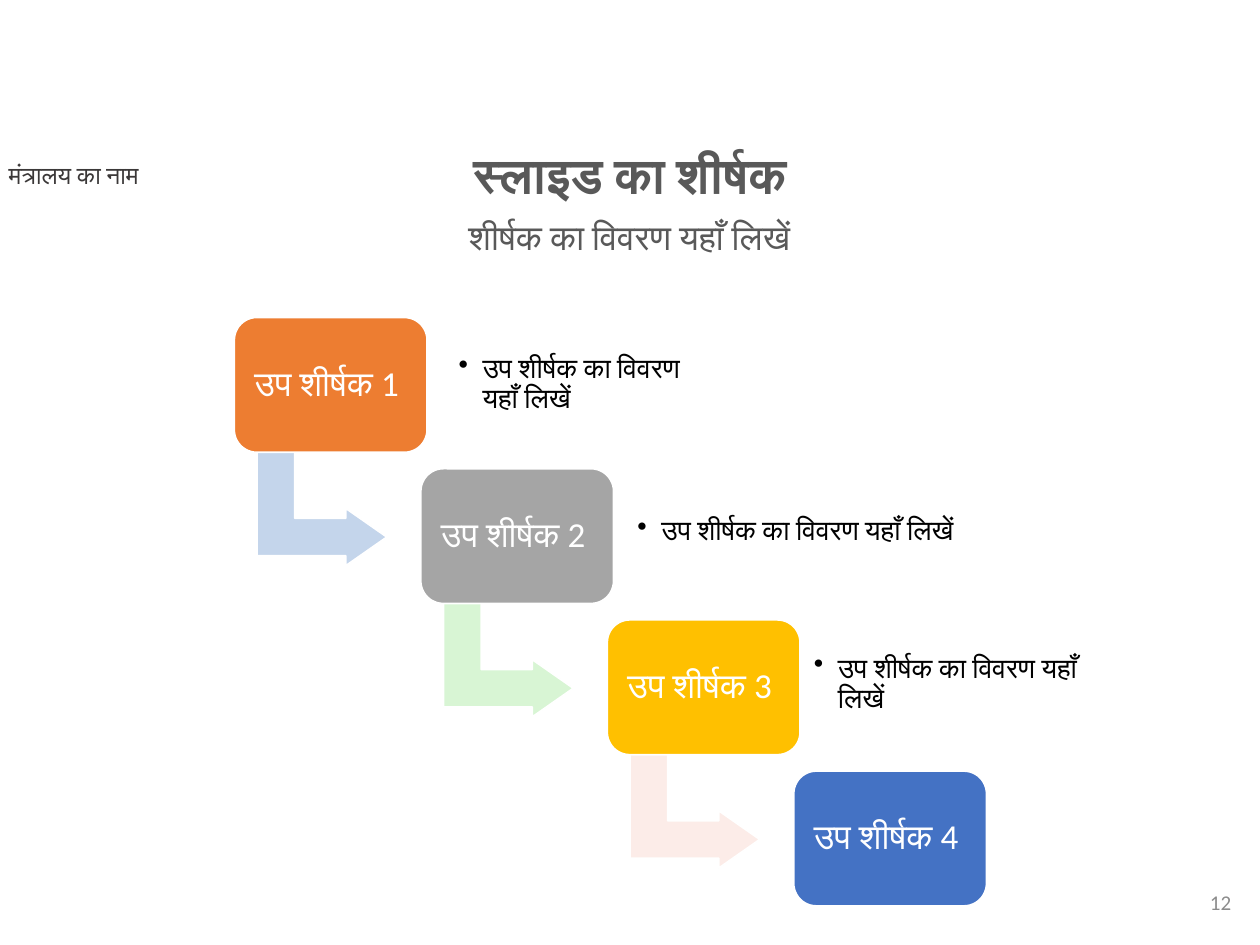
import pptx
import pptx.dml.color
import pptx.enum.shapes
import pptx.enum.text
import pptx.oxml.ns
import pptx.util
from lxml import etree

RGBColor = pptx.dml.color.RGBColor
Shape = pptx.enum.shapes.MSO_SHAPE
Align = pptx.enum.text.PP_ALIGN
Anchor = pptx.enum.text.MSO_ANCHOR

PX = 9144
FONT = "Calibri"
WHITE = RGBColor(0xFF, 0xFF, 0xFF)
BLACK = RGBColor(0x00, 0x00, 0x00)
CHARCOAL = RGBColor(0x3B, 0x38, 0x38)
DARK_GRAY = RGBColor(0x59, 0x59, 0x59)
LIGHT_GRAY = RGBColor(0x8C, 0x8C, 0x8C)
ORANGE = RGBColor(0xED, 0x7D, 0x31)
GRAY = RGBColor(0xA5, 0xA5, 0xA5)
GOLD = RGBColor(0xFF, 0xC0, 0x00)
BLUE = RGBColor(0x44, 0x72, 0xC4)
PALE_BLUE = RGBColor(0xC4, 0xD5, 0xEB)
PALE_GREEN = RGBColor(0xD8, 0xF5, 0xD4)
PALE_PINK = RGBColor(0xFC, 0xEC, 0xE8)

STEP_SIZE = (153, 107)
STEP_PITCH = (148, 120)
ARROW_OFFSET = (24, 100)
ARROW_SIZE = (91, 103)
ARROW_ADJUSTMENTS = (0.328, 0.25, 0.358)
DESCRIPTION = "उप शीर्षक का विवरण यहाँ लिखें"
DESCRIPTION_HEIGHT = 86
BULLET_INDENT = 19

STEPS = [
    {"fill": ORANGE, "arrow": PALE_BLUE, "description": (170, 10, 201)},
    {"fill": GRAY, "arrow": PALE_GREEN, "description": (164, 7, 296)},
    {"fill": GOLD, "arrow": PALE_PINK, "description": (156, 8, 247)},
    {"fill": BLUE},
]


def px(*lengths):
    return [pptx.util.Emu(length * PX) for length in lengths]


def apply_format(target, values):
    for name, value in values.items():
        setattr(target, name, value)


def add_bullet(para):
    properties = para._p.get_or_add_pPr()
    properties.set("marL", str(BULLET_INDENT * PX))
    properties.set("indent", str(-BULLET_INDENT * PX))
    bullet = etree.SubElement(properties, pptx.oxml.ns.qn("a:buChar"))
    bullet.set("char", "•")


def write_text(box, text, size, color, bold=False, align=Align.LEFT,
               anchor=Anchor.TOP, spacing=1.0, inset=None, bullet=False):
    frame = box.text_frame
    apply_format(frame, {"word_wrap": True, "vertical_anchor": anchor})
    if inset is not None:
        for side in ("left", "top", "right", "bottom"):
            setattr(frame, f"margin_{side}", px(inset)[0])
    para = frame.paragraphs[0]
    if bullet:
        add_bullet(para)
    apply_format(para, {"alignment": align, "line_spacing": spacing})
    span = para.add_run()
    span.text = text
    apply_format(span.font, {"name": FONT, "size": pptx.util.Pt(size), "bold": bold})
    span.font.color.rgb = color
    script_font = etree.SubElement(span._r.get_or_add_rPr(), pptx.oxml.ns.qn("a:cs"))
    script_font.set("typeface", FONT)


def add_text(page, bounds, text, size, color, **options):
    box = page.shapes.add_textbox(*px(*bounds))
    write_text(box, text, size, color, **options)


def add_solid(page, kind, bounds, fill, adjustments):
    shape = page.shapes.add_shape(kind, *px(*bounds))
    shape.shadow.inherit = False
    shape.fill.solid()
    shape.fill.fore_color.rgb = fill
    shape.line.color.rgb = WHITE
    shape.line.width = pptx.util.Pt(1)
    for index, value in enumerate(adjustments):
        shape.adjustments[index] = value
    return shape


def add_heading(page, left, top):
    add_text(page, (left, top + 55, 707, 63), "शीर्षक का विवरण यहाँ लिखें", 20,
             DARK_GRAY, align=Align.CENTER, spacing=0.9)
    add_text(page, (left + 40, top, 629, 47), "स्लाइड का शीर्षक", 28,
             DARK_GRAY, bold=True, align=Align.CENTER, spacing=0.9)


def add_step(page, left, top, number, step):
    if "arrow" in step:
        bounds = (left + ARROW_OFFSET[0], top + ARROW_OFFSET[1], *ARROW_SIZE)
        arrow = add_solid(page, Shape.BENT_UP_ARROW, bounds, step["arrow"],
                          ARROW_ADJUSTMENTS)
        arrow.rotation = 90
    block = add_solid(page, Shape.ROUNDED_RECTANGLE, (left, top, *STEP_SIZE),
                      step["fill"], (0.167,))
    write_text(block, f"उप शीर्षक {number} ", 20, WHITE, align=Align.CENTER,
               anchor=Anchor.MIDDLE, spacing=0.9, inset=8)
    if "description" in step:
        across, down, width = step["description"]
        add_text(page, (left + across, top + down, width, DESCRIPTION_HEIGHT),
                 DESCRIPTION, 16, BLACK, anchor=Anchor.MIDDLE, spacing=0.9,
                 inset=8, bullet=True)


def add_staircase(page, left, top):
    for index, step in enumerate(STEPS):
        add_step(page, left + index * STEP_PITCH[0], top + index * STEP_PITCH[1],
                 index + 1, step)


def main():
    deck = pptx.Presentation()
    deck.slide_width, deck.slide_height = px(1000, 750)
    page = deck.slides.add_slide(deck.slide_layouts[6])
    add_text(page, (-3, 122, 218, 34), "मंत्रालय का नाम", 14, CHARCOAL)
    add_text(page, (762, 696, 225, 40), "12", 12, LIGHT_GRAY,
             align=Align.RIGHT, anchor=Anchor.MIDDLE)
    add_heading(page, 146, 115)
    add_staircase(page, 186, 252)
    deck.save("out.pptx")


if __name__ == "__main__":
    main()
